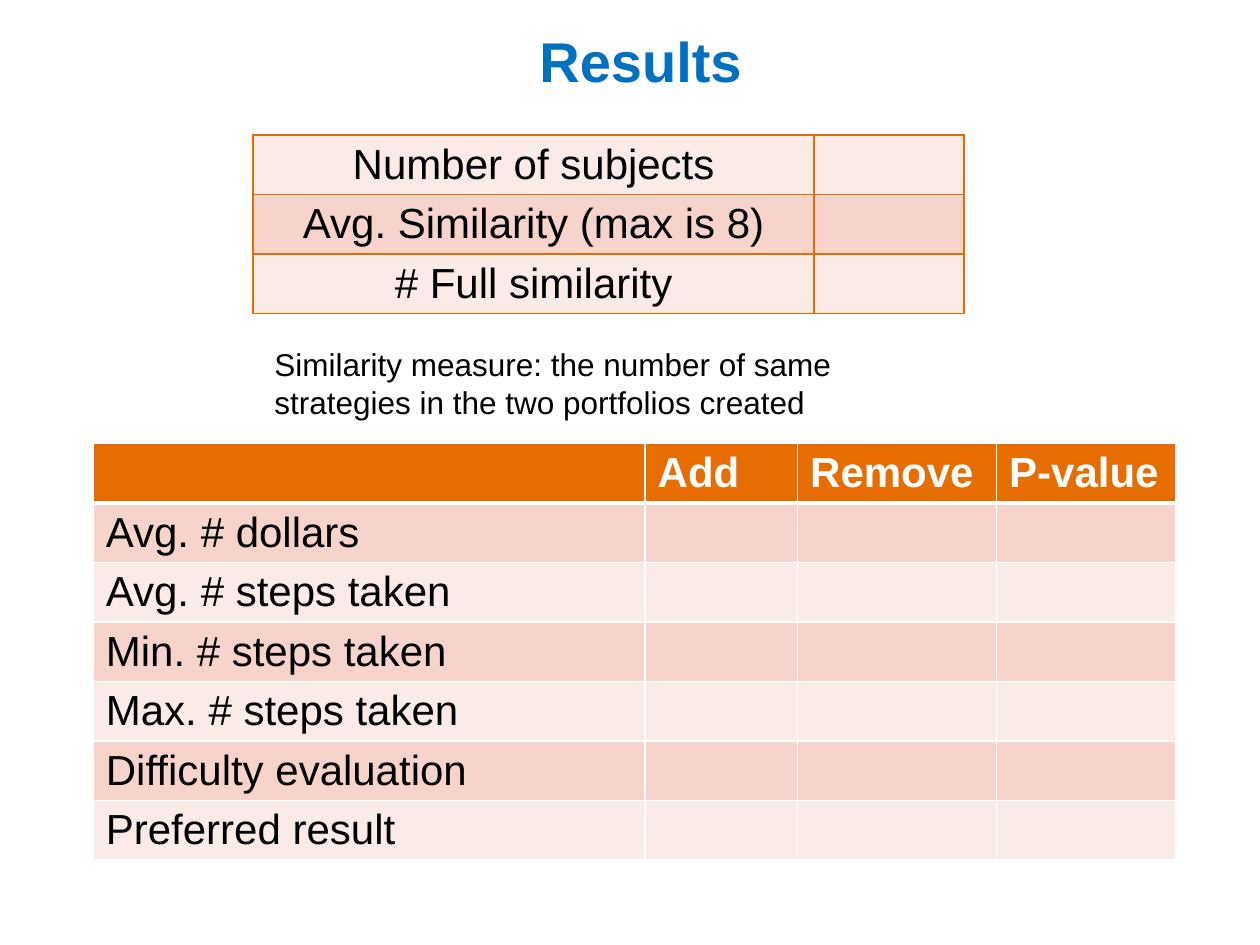
from dataclasses import dataclass

from lxml import etree
from pptx import Presentation
from pptx.dml.color import RGBColor
from pptx.enum.text import PP_ALIGN
from pptx.oxml.ns import qn
from pptx.util import Inches, Pt

LEFT = PP_ALIGN.LEFT
MID = PP_ALIGN.CENTER
BLUE = RGBColor(0x00, 0x70, 0xC0)
ORANGE = RGBColor(0xE7, 0x6D, 0x00)
ROSE = RGBColor(0xF6, 0xD4, 0xCC)
PALE = RGBColor(0xFA, 0xEB, 0xE7)
WHITE = RGBColor(0xFF, 0xFF, 0xFF)
BLACK = RGBColor(0x00, 0x00, 0x00)
FONT = "Arial"
ROW = 0.472


@dataclass
class Note:
    text: str
    left: float
    top: float
    width: float
    height: float
    size: int
    color: RGBColor
    bold: bool
    align: PP_ALIGN
    inset: tuple[float, float]


@dataclass
class Grid:
    left: float
    top: float
    cols: list[float]
    heads: list[str]
    labels: list[str]
    bands: tuple[RGBColor, RGBColor]
    edge: RGBColor
    align: PP_ALIGN


NOTES = [
    Note("Results", 0.72, 0.21, 8.73, 1.18, 32, BLUE, True, MID, (0, 0)),
    Note("Similarity measure: the number of same strategies in the two portfolios created",
         2.08, 2.69, 5, 0.71, 18, BLACK, False, LEFT, (0.1, 0.05)),
]
GRIDS = [
    Grid(0.74, 3.52, [4.38, 1.21, 1.58, 1.42],
         ["", "Add", "Remove", "P-value"],
         ["Avg. # dollars", "Avg. # steps taken", "Min. # steps taken",
          "Max. # steps taken", "Difficulty evaluation", "Preferred result"],
         (ROSE, PALE), WHITE, LEFT),
    Grid(2.01, 1.07, [4.45, 1.19], [],
         ["Number of subjects", "Avg. Similarity (max is 8)", "# Full similarity"],
         (PALE, ROSE), ORANGE, MID),
]


def write(frame, text: str, size: int, color: RGBColor, bold: bool, align: PP_ALIGN) -> None:
    para = frame.paragraphs[0]
    para.alignment = align
    run = para.add_run()
    run.text = text
    font = run.font
    font.name, font.size, font.bold = FONT, Pt(size), bold
    font.color.rgb = color


def add_note(slide, note: Note) -> None:
    box = slide.shapes.add_textbox(Inches(note.left), Inches(note.top),
                                   Inches(note.width), Inches(note.height))
    frame = box.text_frame
    frame.word_wrap = True
    side, end = note.inset
    frame.margin_left = frame.margin_right = Inches(side)
    frame.margin_top = frame.margin_bottom = Inches(end)
    write(frame, note.text, note.size, note.color, note.bold, note.align)


def add_edge(cell, side: str, color: RGBColor, width: int) -> None:
    props = cell._tc.get_or_add_tcPr()
    line = etree.SubElement(props, qn(f"a:ln{side}"), w=str(Pt(width)))
    fill = etree.SubElement(line, qn("a:solidFill"))
    etree.SubElement(fill, qn("a:srgbClr"), val=str(color))


def add_grid(slide, grid: Grid) -> None:
    body = [[label] + [""] * (len(grid.cols) - 1) for label in grid.labels]
    top = [grid.heads] if grid.heads else []
    rows = top + body
    table = slide.shapes.add_table(
        len(rows), len(grid.cols), Inches(grid.left), Inches(grid.top),
        Inches(sum(grid.cols)), Inches(ROW * len(rows))).table
    table.first_row = bool(top)
    table.horz_banding = False
    for col, width in zip(table.columns, grid.cols):
        col.width = Inches(width)
    for r, row in enumerate(rows):
        table.rows[r].height = Inches(ROW)
        head = r < len(top)
        for c, text in enumerate(row):
            cell = table.cell(r, c)
            for side in "LRTB":
                thick = (head and side == "B") or (top and r == 1 and side == "T")
                add_edge(cell, side, grid.edge, 3 if thick else 1)
            cell.fill.solid()
            cell.fill.fore_color.rgb = ORANGE if head else grid.bands[(r - len(top)) % 2]
            if text:
                write(cell.text_frame, text, 24, WHITE if head else BLACK, head, grid.align)


def main() -> None:
    deck = Presentation()
    deck.slide_width, deck.slide_height = Inches(10), Inches(7.5)
    slide = deck.slides.add_slide(deck.slide_layouts[6])
    for grid in GRIDS:
        add_grid(slide, grid)
    for note in NOTES:
        add_note(slide, note)
    deck.save("out.pptx")


if __name__ == "__main__":
    main()
